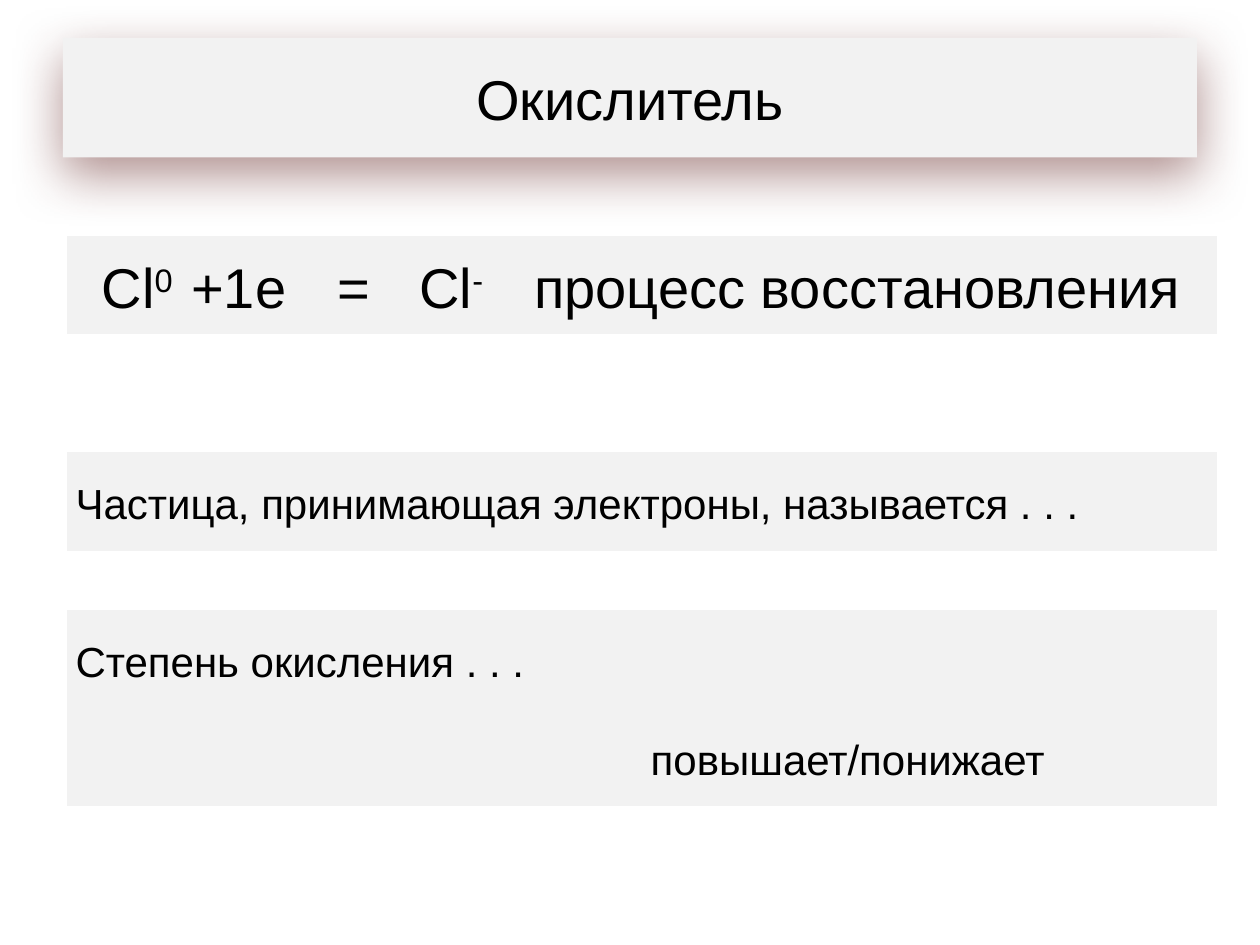
"""Build a chemistry slide about the oxidising agent."""
from lxml.etree import SubElement
from pptx import Presentation
from pptx.dml.color import RGBColor
from pptx.enum.shapes import MSO_SHAPE
from pptx.enum.text import MSO_ANCHOR, PP_ALIGN
from pptx.oxml.ns import qn
from pptx.util import Inches, Pt

THEME = {
    "font": "Arial", "text": "000000", "panel": "F2F2F2", "shadow": "632523",
    "large": 32, "body": 24, "leading": 1.15,
    "table_style": "{2D5ABB26-0587-4C30-8999-92F81FD0307C}",
}
LEFT, WIDTH, ROW_HEIGHT = 0.53, 9.13, 0.78
TITLE = "Окислитель"
L, C, R = PP_ALIGN.LEFT, PP_ALIGN.CENTER, PP_ALIGN.RIGHT

TABLES = [
    {"top": 1.87, "size": "large", "cols": [0.91] * 4 + [5.49],
     "rows": [[("Cl", "0", R), ("+1e", "", C), ("=", "", C), ("Cl", "-", L),
               ("процесс восстановления", "", L)]]},
    {"top": 3.59, "size": "body", "cols": [WIDTH],
     "rows": [[("Частица, принимающая электроны, называется . . .", "", L)]]},
    {"top": 4.84, "size": "body", "cols": [WIDTH / 2] * 2, "merge_first": True,
     "rows": [[("Степень окисления . . .", "", L), None],
              [None, ("повышает/понижает", "", L)]]},
]


def rgb(name):
    return RGBColor.from_string(THEME[name])


def paint(target):
    target.fill.solid()
    target.fill.fore_color.rgb = rgb("panel")


def add_run(p, text, size, superscript=False):
    r = p.add_run()
    r.text = text
    r.font.size = Pt(THEME[size])
    r.font.name = THEME["font"]
    r.font.color.rgb = rgb("text")
    if superscript:
        r.font._element.set("baseline", "30000")


def add_shadow(s):
    effects = s._element.spPr.find(qn("a:effectLst"))
    shadow = SubElement(effects, qn("a:outerShdw"), blurRad=str(Pt(30)),
                        dist=str(Pt(10)), dir="5400000", algn="t", rotWithShape="0")
    color = SubElement(shadow, qn("a:srgbClr"), val=THEME["shadow"])
    SubElement(color, qn("a:alpha"), val="50000")


def add_title(slide):
    sp = slide.shapes.add_shape(MSO_SHAPE.RECTANGLE, Inches(0.5), Inches(0.3),
                                Inches(9), Inches(0.95))
    sp.shadow.inherit = False
    add_shadow(sp)
    paint(sp)
    sp.line.fill.background()
    tf = sp.text_frame
    tf.word_wrap = True
    tf.vertical_anchor = MSO_ANCHOR.MIDDLE
    p = tf.paragraphs[0]
    p.alignment = C
    add_run(p, TITLE, "large")


def fill_cell(cell, content, size):
    paint(cell)
    cell.vertical_anchor = MSO_ANCHOR.MIDDLE
    cell.margin_left = cell.margin_right = Inches(0.07)
    cell.margin_top = cell.margin_bottom = 0
    if content is None:
        return
    base, superscript, align = content
    p = cell.text_frame.paragraphs[0]
    p.alignment = align
    p.line_spacing = THEME["leading"]
    add_run(p, base, size)
    if superscript:
        add_run(p, superscript, size, True)


def add_table(slide, data):
    rows, cols = data["rows"], data["cols"]
    frame = slide.shapes.add_table(len(rows), len(cols), Inches(LEFT), Inches(data["top"]),
                                   Inches(WIDTH), Inches(ROW_HEIGHT * len(rows)))
    table = frame.table
    table.first_row = table.horz_banding = False
    table._tbl.tblPr.find(qn("a:tableStyleId")).text = THEME["table_style"]
    for column, width in zip(table.columns, cols):
        column.width = Inches(width)
    for i, row in enumerate(rows):
        for j, content in enumerate(row):
            fill_cell(table.cell(i, j), content, data["size"])
    if data.get("merge_first"):
        table.cell(0, 0).merge(table.cell(0, len(cols) - 1))


def main():
    prs = Presentation()
    prs.slide_width, prs.slide_height = Inches(10), Inches(7.5)
    slide = prs.slides.add_slide(prs.slide_layouts[6])
    add_title(slide)
    for data in TABLES:
        add_table(slide, data)
    prs.save("out.pptx")


if __name__ == "__main__":
    main()
